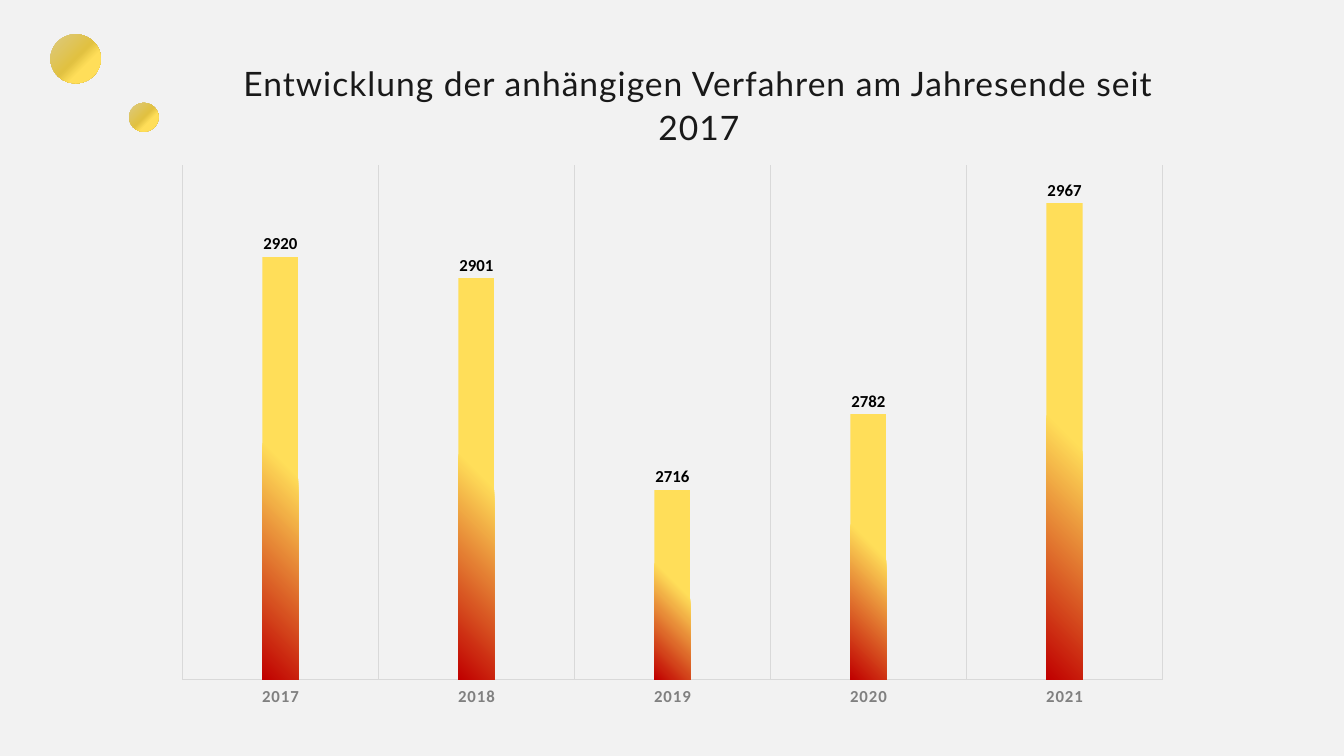
from pptx import Presentation
from pptx.chart.data import CategoryChartData as ChartData
from pptx.dml.color import RGBColor
from pptx.enum.chart import XL_CHART_TYPE as Kind, XL_LABEL_POSITION as Spot
from pptx.enum.chart import XL_TICK_LABEL_POSITION as Tick, XL_TICK_MARK as Mark
from pptx.enum.shapes import MSO_SHAPE as Shape
from pptx.enum.text import PP_ALIGN as Align
from pptx.oxml import parse_xml
from pptx.oxml.ns import nsdecls, qn
from pptx.util import Pt

PX = 9144
BACK = RGBColor(0xF2, 0xF2, 0xF2)
BLACK = RGBColor(0, 0, 0)
INK = RGBColor(0x19, 0x19, 0x19)
GRAY = RGBColor(0x80, 0x80, 0x80)
RULE = RGBColor(0xD9, 0xD9, 0xD9)
RED = RGBColor(0xC0, 0, 0)
SAND = RGBColor(0xDC, 0xCA, 0x83)
GOLD = RGBColor(0xE1, 0xC1, 0x41)
YELLOW = RGBColor(0xFF, 0xDE, 0x59)

SLOPE = '<a:lin ang="2700000" scaled="0"/>'
CORNER = '<a:path path="circle"><a:fillToRect t="100000" r="100000"/></a:path>'
YEARS = ["2017", "2018", "2019", "2020", "2021"]
CASES = [2920, 2901, 2716, 2782, 2967]


def scale(box):
    return [n * PX for n in box]


def blend(fill, props, stops, mode):
    fill.solid()
    marks = "".join(
        f'<a:gs pos="{at * 1000}"><a:srgbClr val="{tone}"/></a:gs>' for at, tone in stops
    )
    grad = parse_xml(
        f'<a:gradFill {nsdecls("a")} rotWithShape="1"><a:gsLst>{marks}</a:gsLst>{mode}</a:gradFill>'
    )
    props.replace(props.find(qn("a:solidFill")), grad)


def style(font, size, color, bold=False, name="Calibri"):
    font.name = name
    font.size = Pt(size)
    font.bold = bold
    font.color.rgb = color


def rule(line):
    line.color.rgb = RULE
    line.width = Pt(0.75)


def set_plot(chart, box):
    area = chart._chartSpace.find(".//" + qn("c:plotArea"))
    for old in area.findall(qn("c:layout")):
        area.remove(old)
    sides = "".join(f'<c:{key} val="{val}"/>' for key, val in zip("xywh", box))
    area.insert(0, parse_xml(
        f'<c:layout {nsdecls("c")}><c:manualLayout><c:layoutTarget val="inner"/>'
        f'<c:xMode val="edge"/><c:yMode val="edge"/>{sides}</c:manualLayout></c:layout>'
    ))


def add_bars(slide, box):
    data = ChartData(number_format="0")
    data.categories = YEARS
    data.add_series("Series 1", CASES)
    chart = slide.shapes.add_chart(Kind.COLUMN_CLUSTERED, *scale(box), data).chart
    chart.has_legend = False
    chart.has_title = False
    style(chart.font, 10, BLACK)
    set_plot(chart, (0.013, 0.034, 0.975, 0.896))

    years = chart.category_axis
    years.tick_label_position = Tick.LOW
    years.major_tick_mark = years.minor_tick_mark = Mark.NONE
    years.has_major_gridlines = True
    rule(years.major_gridlines.format.line)
    rule(years.format.line)
    style(years.tick_labels.font, 18, GRAY, True)
    years._element.find(".//" + qn("a:defRPr")).set("spc", "100")

    count = chart.value_axis
    count.minimum_scale = 2550
    count.maximum_scale = 3000
    count.has_major_gridlines = False
    count.visible = False

    plot = chart.plots[0]
    plot.vary_by_categories = False
    plot.gap_width = 444
    plot.overlap = -90
    bars = plot.series[0]
    bars.invert_if_negative = False
    fill = bars.format.fill
    blend(fill, bars._element.spPr, [(0, RED), (52, YELLOW)], CORNER)
    labels = bars.data_labels
    labels.show_value = True
    labels.position = Spot.OUTSIDE_END
    style(labels.font, 18, BLACK, True)


def add_title(slide, box, text):
    frame = slide.shapes.add_textbox(*scale(box)).text_frame
    frame.word_wrap = True
    frame.margin_left = frame.margin_right = 0
    frame.margin_top = frame.margin_bottom = 0
    para = frame.paragraphs[0]
    para.alignment = Align.CENTER
    para.line_spacing = Pt(47.2)
    run = para.add_run()
    run.text = text
    style(run.font, 36, INK, name="Lato")
    run.font._element.set("spc", "110")


def add_dot(slide, box):
    dot = slide.shapes.add_shape(Shape.OVAL, *scale(box))
    dot.shadow.inherit = False
    dot.line.fill.background()
    stops = [(0, SAND), (50, GOLD), (67, YELLOW)]
    blend(dot.fill, dot._element.spPr, stops, SLOPE)


def main():
    deck = Presentation()
    deck.slide_width, deck.slide_height = scale((2000, 1125))
    slide = deck.slides.add_slide(deck.slide_layouts[6])
    slide.background.fill.solid()
    slide.background.fill.fore_color.rgb = BACK
    add_bars(slide, (252, 217, 1496, 854))
    add_title(slide, (300, 88, 1480, 132),
              "Entwicklung der anhängigen Verfahren am Jahresende seit 2017")
    for box in ((75, 51, 75, 73), (192, 153, 44, 43)):
        add_dot(slide, box)
    deck.save("out.pptx")


if __name__ == "__main__":
    main()
